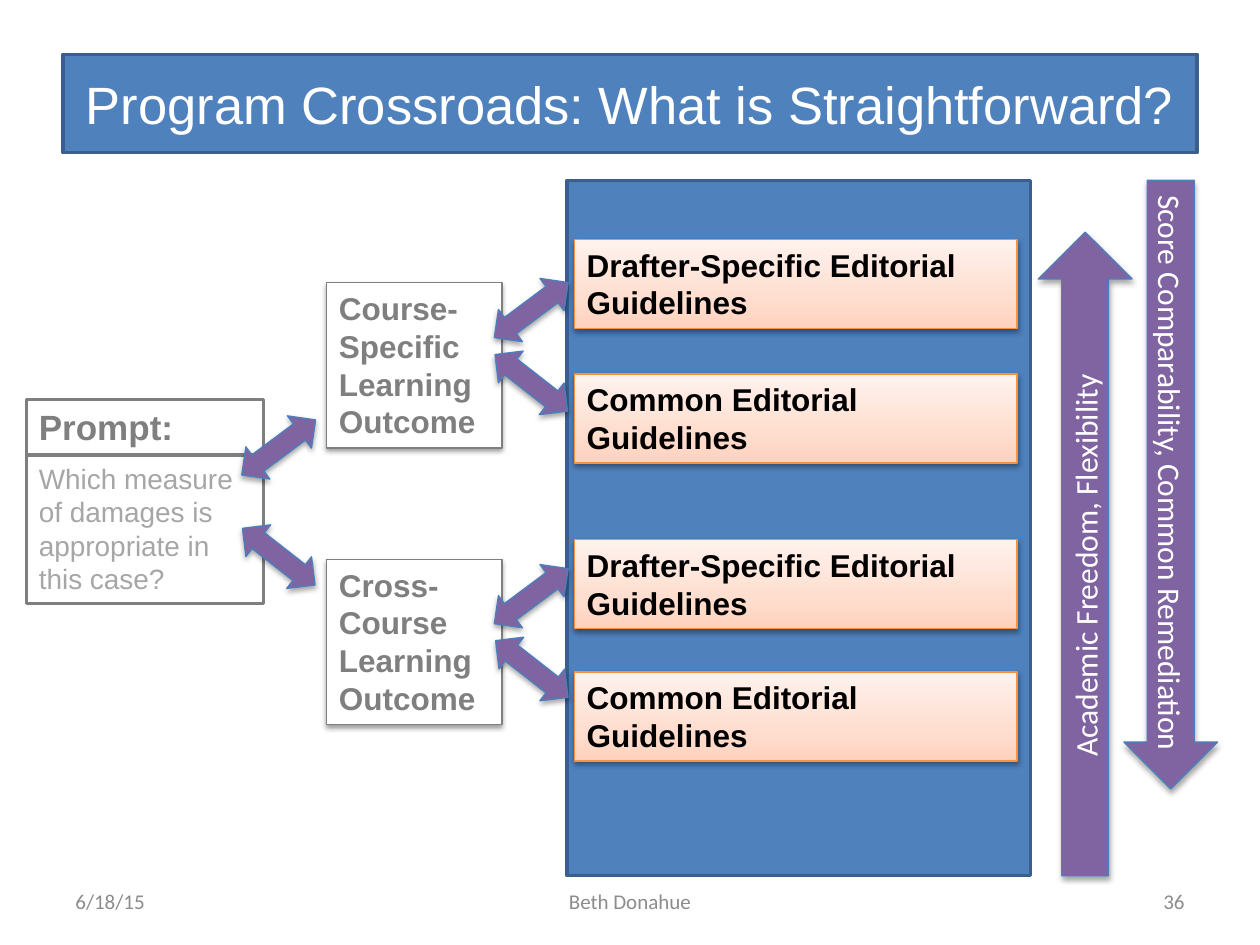
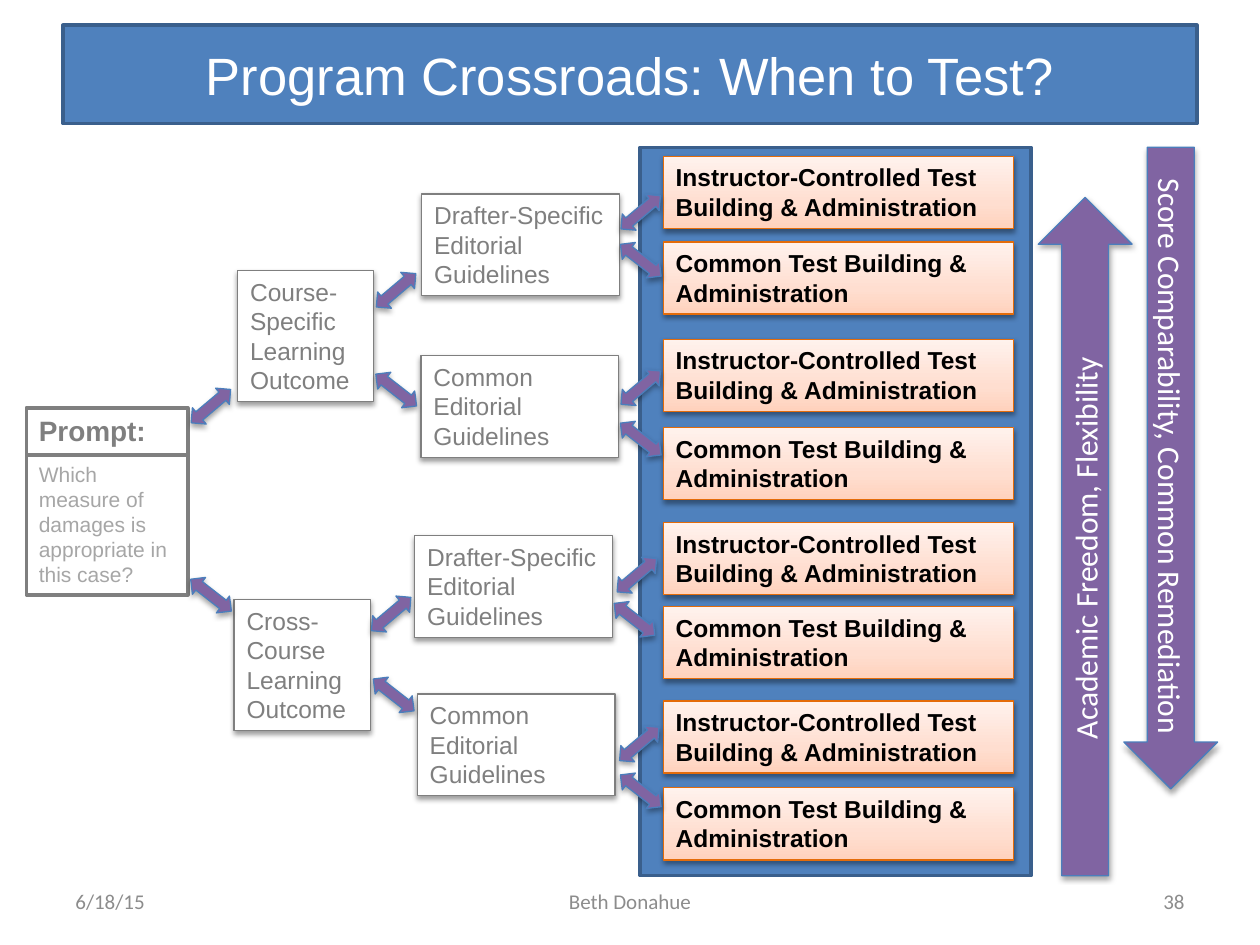
from copy import deepcopy

from lxml import etree
from pptx import Presentation
from pptx.dml.color import RGBColor
from pptx.enum.shapes import MSO_SHAPE
from pptx.enum.text import MSO_ANCHOR, MSO_AUTO_SIZE, PP_ALIGN
from pptx.oxml.ns import qn
from pptx.util import Pt

RECTANGLE = MSO_SHAPE.RECTANGLE
ROUNDED = MSO_SHAPE.ROUNDED_RECTANGLE
DOUBLE_ARROW = MSO_SHAPE.LEFT_RIGHT_ARROW
UP_ARROW = MSO_SHAPE.UP_ARROW
TOP, MIDDLE = MSO_ANCHOR.TOP, MSO_ANCHOR.MIDDLE
LEFT, CENTER, RIGHT = PP_ALIGN.LEFT, PP_ALIGN.CENTER, PP_ALIGN.RIGHT
GROW = MSO_AUTO_SIZE.SHAPE_TO_FIT_TEXT

COLORS = {
    "blue": "4F81BD",
    "blue_edge": "3A5F8C",
    "purple": "8064A2",
    "purple_edge": "4B7EBC",
    "white": "FFFFFF",
    "black": "000000",
    "gray": "7F7F7F",
    "pale_gray": "A6A6A6",
    "footer": "8C8C8C",
    "orange": "F69240",
    "dark_orange": "E46C0A",
    "peach_dark": "FFD2BD",
    "peach": "FFDED0",
    "peach_light": "FFF2ED",
}
PEACH_STOPS = [(0, "peach_dark"), (0.35, "peach"), (1, "peach_light")]
PANEL_BOTTOM = 500.4
DOWN_ARROW_BOTTOM = 450.8
RISING_TILT = {"large": -36.7, "small": -40.2}
FALLING_TILT = 38
ARROW_SIZE = {"large": (52.6, 23), "small": (29.5, 12.2)}

COURSE = "Course-Specific Learning Outcome"
CROSS = "Cross-Course Learning Outcome"
DRAFTER = "Drafter-Specific Editorial Guidelines"
COMMON = "Common Editorial Guidelines"
INSTRUCTOR_TEST = "Instructor-Controlled Test Building & Administration"
COMMON_TEST = "Common Test Building & Administration"


def rgb(name):
    return RGBColor.from_string(COLORS[name])


def add_block(slide, preset, box, fill, edge, edge_width):
    shape = slide.shapes.add_shape(preset, *map(Pt, box))
    shape.shadow.inherit = False
    shape.fill.solid()
    shape.fill.fore_color.rgb = rgb(fill)
    shape.line.color.rgb = rgb(edge)
    shape.line.width = Pt(edge_width)
    return shape


def write(shape, text, size, color, font="Arial", bold=False, align=LEFT, anchor=TOP):
    frame = shape.text_frame
    frame.word_wrap = True
    frame.vertical_anchor = anchor
    frame.text = text
    paragraph = frame.paragraphs[0]
    paragraph.alignment = align
    run_font = paragraph.runs[0].font
    run_font.name = font
    run_font.size = Pt(size)
    run_font.bold = bold
    run_font.color.rgb = rgb(color)


def add_shadow(shape, distance, opacity):
    effects = shape._element.spPr.find(qn("a:effectLst"))
    shadow = etree.SubElement(effects, qn("a:outerShdw"), blurRad=str(Pt(3.1)),
                              dist=str(Pt(distance)), dir="5400000", rotWithShape="0")
    color = etree.SubElement(shadow, qn("a:srgbClr"), val=COLORS["black"])
    etree.SubElement(color, qn("a:alpha"), val=str(opacity * 1000))


def fill_peach(shape):
    shape.fill.gradient()
    shape.fill.gradient_angle = 90
    stop_list = shape._element.spPr.find(".//" + qn("a:gsLst"))
    stop_list.append(deepcopy(stop_list[-1]))
    for stop, (position, color) in zip(shape.fill.gradient_stops, PEACH_STOPS):
        stop.position = position
        stop.color.rgb = rgb(color)


def add_panel(slide, left, top, width):
    add_block(slide, RECTANGLE, (left, top, width, PANEL_BOTTOM - top), "blue", "blue_edge", 2)


def add_title(slide, text, top):
    title = add_block(slide, ROUNDED, (36, top, 648, 56.2), "blue", "blue_edge", 2)
    title.adjustments[0] = 0
    write(title, text, 30, "white", align=CENTER, anchor=MIDDLE)


def add_prompt(slide, top, width, body_height, heading_size, body_size):
    divider = 260
    rows = [
        ("Prompt:", top, divider - top, heading_size, "gray", True),
        ("Which measure of damages is appropriate in this case?",
         divider, body_height, body_size, "pale_gray", False),
    ]
    for text, row_top, height, size, color, bold in rows:
        row = add_block(slide, RECTANGLE, (15.1, row_top, width, height), "white", "gray", 2)
        write(row, text, size, color, bold=bold)
        row.text_frame.auto_size = GROW


def add_gray_box(slide, text, box, size, bold=False):
    shape = add_block(slide, RECTANGLE, box, "white", "gray", 0.75)
    add_shadow(shape, 1.6, 38)
    write(shape, text, size, "gray", bold=bold)
    shape.text_frame.auto_size = GROW


def add_peach_box(slide, text, box, size, edge):
    shape = add_block(slide, RECTANGLE, box, "white", edge, 0.75)
    fill_peach(shape)
    add_shadow(shape, 1.6, 38)
    write(shape, text, size, "black", bold=True)
    shape.text_frame.auto_size = GROW


def add_purple_arrow(slide, preset, box, rotation):
    arrow = add_block(slide, preset, box, "purple", "purple_edge", 0.75)
    arrow.rotation = rotation
    add_shadow(arrow, 1.8, 35)
    return arrow


def add_fork(slide, scale, rising, falling):
    for position, tilt in ((rising, RISING_TILT[scale]), (falling, FALLING_TILT)):
        add_purple_arrow(slide, DOUBLE_ARROW, (*position, *ARROW_SIZE[scale]), tilt)


def add_tradeoff_arrows(slide, up_top, down_top):
    arrows = [
        ("Academic Freedom, Flexibility", 593.3, up_top, PANEL_BOTTOM, 0),
        ("Score Comparability, Common Remediation", 642.2, down_top, DOWN_ARROW_BOTTOM, 180),
    ]
    for text, left, top, bottom, rotation in arrows:
        arrow = add_purple_arrow(slide, UP_ARROW, (left, top, 53.6, bottom - top), rotation)
        write(arrow, text, 18, "white", "Calibri", align=CENTER, anchor=MIDDLE)
        arrow.text_frame._txBody.bodyPr.set("vert", "vert270")


def add_footer(slide, number):
    fields = [
        ("Beth Donahue", 246, 228, CENTER),
        (str(number), 516, 168, RIGHT),
        ("6/18/15", 36, 168, LEFT),
    ]
    for text, left, width, align in fields:
        box = slide.shapes.add_textbox(Pt(left), Pt(PANEL_BOTTOM), Pt(width), Pt(28.8))
        write(box, text, 12, "footer", "Calibri", align=align, anchor=MIDDLE)


def build_guidelines_slide(slide):
    add_panel(slide, 324, 103, 265)
    add_title(slide, "Program Crossroads: What is Straightforward?", 31)
    add_prompt(slide, 228.2, 135.4, 85, 20, 16)
    for text, top in ((COURSE, 161.6), (CROSS, 319.7)):
        add_gray_box(slide, text, (186.6, top, 100.2, 94.5), 18, bold=True)
    guideline_tops = (136.8, 213.8, 308.4, 384)
    for text, top in zip((DRAFTER, COMMON) * 2, guideline_tops):
        add_peach_box(slide, text, (328.2, top, 253, 50.9), 18, "orange")
    forks = [
        ((133, 244.2), (133, 306.6)),
        ((277.3, 165.7), (277.3, 207.3)),
        ((277.3, 329.2), (277.6, 370.8)),
    ]
    for rising, falling in forks:
        add_fork(slide, "large", rising, falling)
    add_tradeoff_arrows(slide, 132.6, 103)
    add_footer(slide, 36)


def build_testing_slide(slide):
    add_panel(slide, 365.8, 84.2, 223.4)
    add_title(slide, "Program Crossroads: When to Test?", 14.4)
    add_prompt(slide, 233, 92.2, 79.9, 16, 12)
    for text, left, top in ((COURSE, 135.8, 154.6), (CROSS, 133.8, 342.7)):
        add_gray_box(slide, text, (left, top, 77.8, 74.9), 14)
    guideline_positions = [(241, 110.8), (240.6, 203.2), (237, 306), (238.5, 396.6)]
    for text, position in zip((DRAFTER, COMMON) * 2, guideline_positions):
        add_gray_box(slide, text, (*position, 113, 58.2), 14)
    test_tops = (89.3, 138.3, 193.8, 244.2, 298.6, 346.6, 400.6, 450.2)
    for text, top in zip((INSTRUCTOR_TEST, COMMON_TEST) * 4, test_tops):
        add_peach_box(slide, text, (379, top, 200.2, 41.2), 14, "dark_orange")
    forks = [
        ((105.8, 226), (105.8, 334)),
        ((211.6, 159.8), (211.6, 216.8)),
        ((208.8, 344.8), (210.2, 391)),
        ((351.4, 115.2), (351.4, 142.6)),
        ((351.4, 215.4), (351.4, 244.8)),
        ((349.2, 322.6), (347.8, 347.8)),
        ((350.6, 419), (351.4, 445.8)),
    ]
    for rising, falling in forks:
        add_fork(slide, "small", rising, falling)
    add_tradeoff_arrows(slide, 112.8, 84.2)
    add_footer(slide, 38)


def main():
    presentation = Presentation()
    presentation.slide_width = Pt(720)
    presentation.slide_height = Pt(540)
    blank_layout = presentation.slide_layouts[6]
    for build_slide in (build_guidelines_slide, build_testing_slide):
        build_slide(presentation.slides.add_slide(blank_layout))
    presentation.save("out.pptx")


if __name__ == "__main__":
    main()
